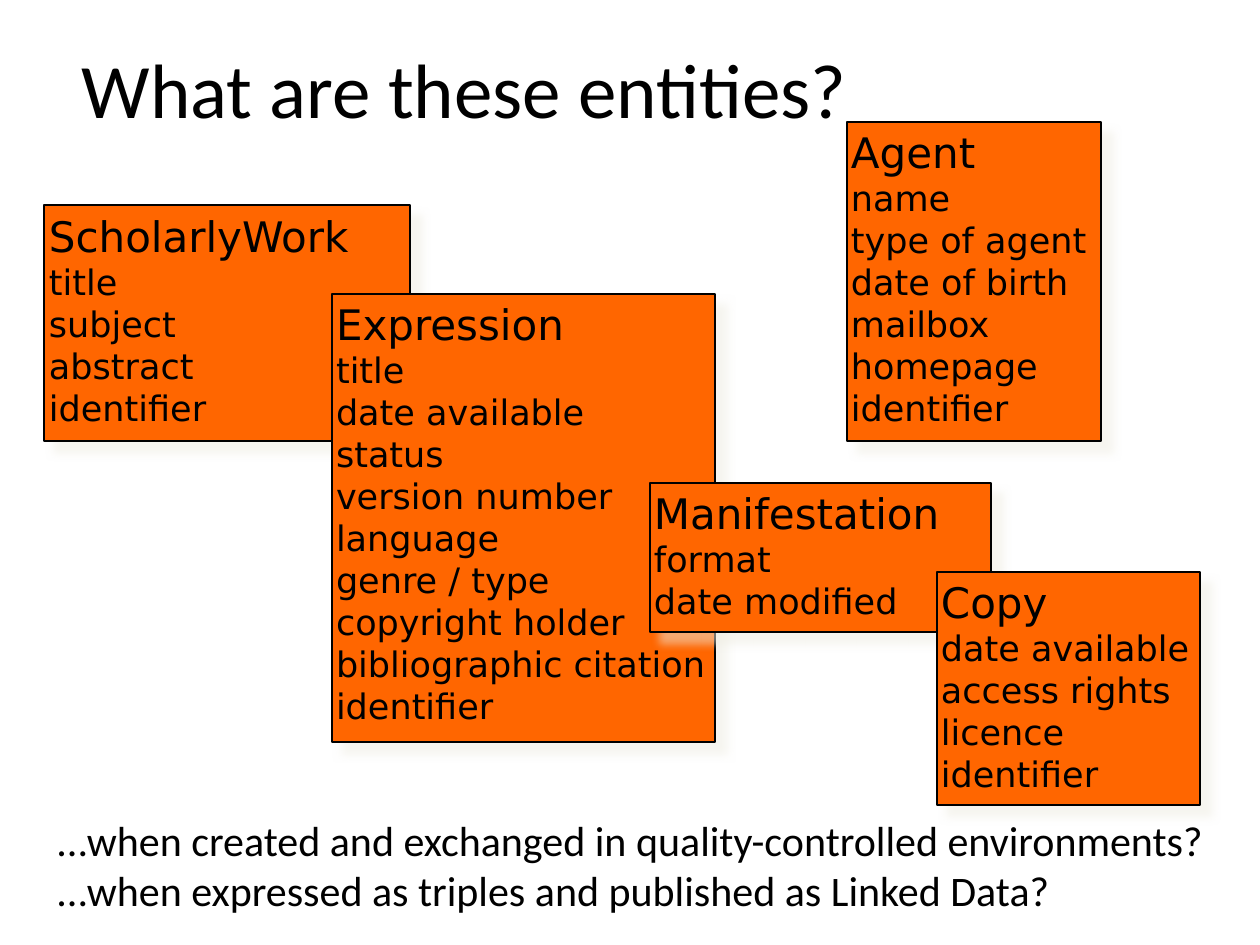
from lxml import etree
from pptx import Presentation
from pptx.dml.color import RGBColor
from pptx.enum.shapes import MSO_SHAPE as Shape
from pptx.enum.text import MSO_ANCHOR as Anchor, MSO_AUTO_SIZE as Fit, PP_ALIGN as Align
from pptx.oxml import parse_xml
from pptx.oxml.ns import nsdecls
from pptx.util import Emu, Pt

SCALE = 914400 / 126


def px(*sizes):
    """Turn pixel lengths into EMU."""
    return [Emu(round(size * SCALE)) for size in sizes]


def write(frame, lines, font, sizes, align=Align.LEFT):
    """Fill a text frame with one run per line, at the given point sizes."""
    for i, (line, size) in enumerate(zip(lines, sizes)):
        para = frame.paragraphs[0] if i == 0 else frame.add_paragraph()
        para.alignment = align
        run = para.add_run()
        run.text = line
        run.font.name = font
        run.font.size = Pt(size)
        run.font.color.rgb = RGBColor.from_string("000000")


SHADOW = parse_xml(
    f'<a:effectLst {nsdecls("a")}>'
    '<a:outerShdw blurRad="63500" dist="107950" dir="2700000" algn="ctr" rotWithShape="0">'
    '<a:srgbClr val="EEECE1"><a:alpha val="50000"/></a:srgbClr>'
    '</a:outerShdw></a:effectLst>')

# Entity name, box in px, inset in px, attributes
ENTITIES = [
    ("ScholarlyWork", (44, 205, 366, 236), 5,
     ["title", "subject", "abstract", "identifier"]),
    ("Agent", (847, 122, 254, 319), 4,
     ["name", "type of agent", "date of birth", "mailbox", "homepage", "identifier"]),
    ("Expression", (332, 294, 383, 448), 4,
     ["title", "date available", "status", "version number", "language",
      "genre / type", "copyright holder", "bibliographic citation", "identifier"]),
    ("Manifestation", (650, 483, 341, 149), 4,
     ["format", "date modified"]),
    ("Copy", (937, 572, 263, 233), 4,
     ["date available", "access rights", "licence", "identifier"]),
]

deck = Presentation()
deck.slide_width, deck.slide_height = px(1260, 945)
slide = deck.slides.add_slide(deck.slide_layouts[5])

title = slide.shapes.title
title.left, title.top, title.width, title.height = px(69, 9, 1032, 157)
title.text_frame.vertical_anchor = Anchor.MIDDLE
write(title.text_frame, ["What are these entities?"], "Calibri", [44])

for name, place, inset, fields in ENTITIES:
    box = slide.shapes.add_shape(Shape.RECTANGLE, *px(*place))
    box.fill.solid()
    box.fill.fore_color.rgb = RGBColor.from_string("FF6600")
    box.line.color.rgb = RGBColor.from_string("000000")
    box.line.width = Pt(1.07)
    box.shadow.inherit = False
    props = box._element.spPr
    props.replace(props.find("{*}effectLst"), parse_xml(etree.tostring(SHADOW)))

    frame = box.text_frame
    frame.word_wrap = True
    frame.vertical_anchor = Anchor.TOP
    (frame.margin_left, frame.margin_top,
     frame.margin_right, frame.margin_bottom) = px(*[inset] * 4)
    write(frame, [name] + fields, "DejaVu Sans", [24] + [20] * len(fields))

notes = slide.shapes.add_textbox(*px(44, 808, 1192, 115)).text_frame
notes.word_wrap = False
notes.auto_size = Fit.SHAPE_TO_FIT_TEXT
write(notes, ["...when created and exchanged in quality-controlled environments?",
              "...when expressed as triples and published as Linked Data?"],
      "Calibri", [24, 24])

deck.save("out.pptx")
